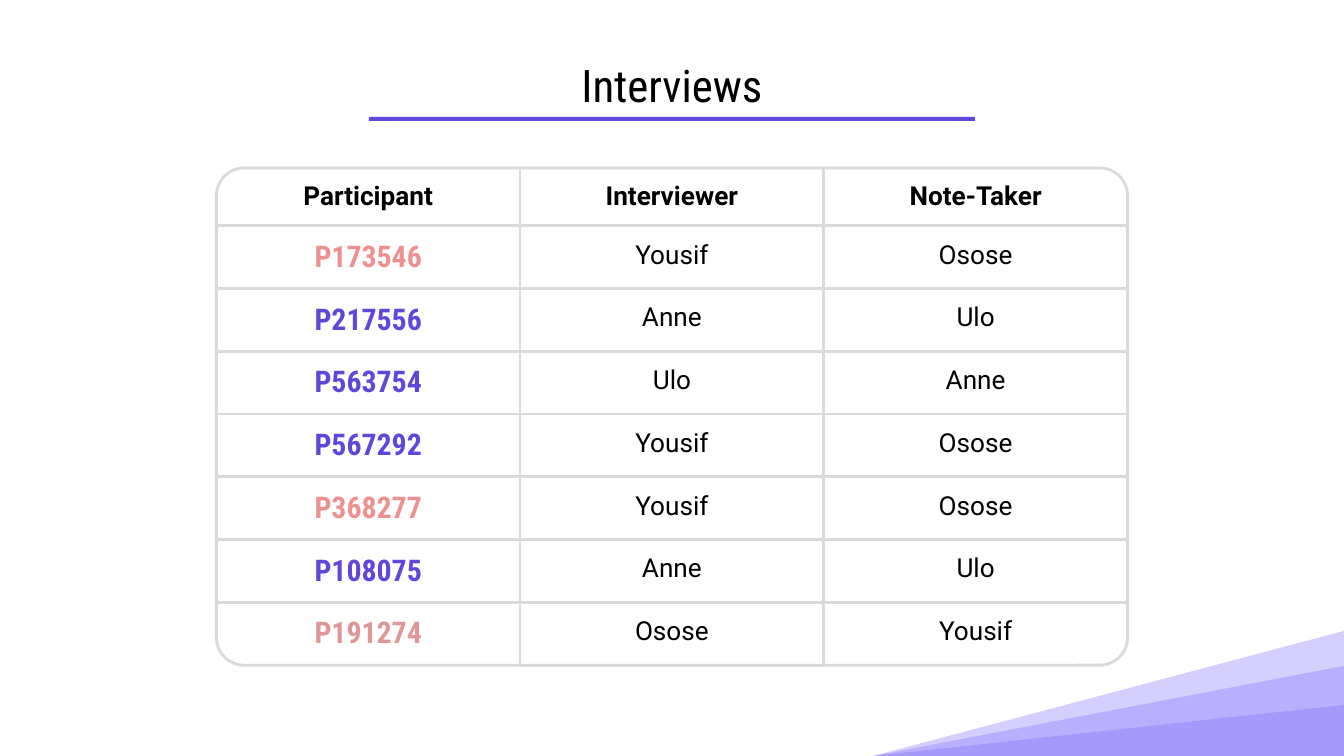
from lxml.etree import SubElement
from pptx import Presentation
from pptx.dml.color import RGBColor
from pptx.enum.shapes import MSO_SHAPE
from pptx.enum.text import MSO_ANCHOR, PP_ALIGN
from pptx.oxml.ns import qn
from pptx.util import Inches, Pt

COLORS = {"black": "000000", "violet": "6146D9", "lilac": "7E6CFB",
          "pink": "ED9090", "rose": "E09696", "grid": "DADADA"}
HEADINGS = ["Participant", "Interviewer", "Note-Taker"]
INTERVIEWS = [
    ("P173546", "Yousif", "Osose", "pink"),
    ("P217556", "Anne", "Ulo", "violet"),
    ("P563754", "Ulo", "Anne", "violet"),
    ("P567292", "Yousif", "Osose", "violet"),
    ("P368277", "Yousif", "Osose", "pink"),
    ("P108075", "Anne", "Ulo", "violet"),
    ("P191274", "Osose", "Yousif", "rose"),
]

# Slide and grid measures in inches
WIDTH = 10
HEIGHT = WIDTH * 9 / 16
COLUMN, HEADER = 2.26, 0.43
TABLE_WIDTH, TABLE_HEIGHT = len(HEADINGS) * COLUMN, 3.7
ROW = (TABLE_HEIGHT - HEADER) / len(INTERVIEWS)
LEFT, TOP = (WIDTH - TABLE_WIDTH) / 2, 1.25
NO_STYLE = "{2D5ABB26-0587-4C30-8999-92F81FD0307C}"

presentation = Presentation()
presentation.slide_width, presentation.slide_height = Inches(WIDTH), Inches(HEIGHT)
slide = presentation.slides.add_slide(presentation.slide_layouts[6])


def add_shape(kind, left, top, width, height, fill=None, line=None):
    shape = slide.shapes.add_shape(kind, *map(Inches, (left, top, width, height)))
    shape.shadow.inherit = False
    if fill:
        shape.fill.solid()
        shape.fill.fore_color.rgb = RGBColor.from_string(COLORS[fill])
    else:
        shape.fill.background()
    if line:
        shape.line.color.rgb = RGBColor.from_string(COLORS[line])
        shape.line.width = Pt(1.5)
    else:
        shape.line.fill.background()
    return shape


def write(frame, text, size, font="Roboto", color="black", bold=False):
    frame.word_wrap = True
    paragraph = frame.paragraphs[0]
    paragraph.text = text
    paragraph.alignment = PP_ALIGN.CENTER
    paragraph.font.name, paragraph.font.size, paragraph.font.bold = font, Pt(size), bold
    paragraph.font.color.rgb = RGBColor.from_string(COLORS[color])


# Translucent corner rays
for height in (0.93, 0.67, 0.38):
    ray = add_shape(MSO_SHAPE.RIGHT_TRIANGLE, 0.65 * WIDTH, HEIGHT - height,
                    0.35 * WIDTH, height, fill="lilac")
    ray._element.spPr.xfrm.set("flipH", "1")
    color = ray._element.spPr.find(qn("a:solidFill"))[0]
    SubElement(color, qn("a:alpha"), val="32000")

# Title and underline
title = slide.shapes.add_textbox(Inches(0.5), Inches(0.45), Inches(WIDTH - 1), Inches(0.36))
title.text_frame.vertical_anchor = MSO_ANCHOR.MIDDLE
title.text_frame.margin_top = title.text_frame.margin_bottom = Inches(0.1)
write(title.text_frame, "Interviews", 24, "Roboto Condensed")
add_shape(MSO_SHAPE.RECTANGLE, (WIDTH - 4.51) / 2, 0.87, 4.51, 0.03, fill="violet")

# Grid: middle column, alternate rows and rounded frame
add_shape(MSO_SHAPE.RECTANGLE, LEFT + COLUMN, TOP, COLUMN, TABLE_HEIGHT, line="grid")
for row in (0, 2, 4, 5):
    add_shape(MSO_SHAPE.RECTANGLE, LEFT, TOP + HEADER + row * ROW, TABLE_WIDTH, ROW, line="grid")
frame = add_shape(MSO_SHAPE.ROUNDED_RECTANGLE, LEFT, TOP, TABLE_WIDTH, TABLE_HEIGHT, line="grid")
frame.adjustments[0] = 0.056

# Interview table
table = slide.shapes.add_table(len(INTERVIEWS) + 1, len(HEADINGS), Inches(LEFT), Inches(TOP),
                               Inches(TABLE_WIDTH), Inches(TABLE_HEIGHT)).table
table.first_row = table.horz_banding = False
table._tbl.tblPr.find(qn("a:tableStyleId")).text = NO_STYLE
for column in table.columns:
    column.width = Inches(COLUMN)
for index, row in enumerate(table.rows):
    row.height = Inches(ROW if index else HEADER)
    for cell in row.cells:
        cell.fill.background()
        cell.margin_left = cell.margin_right = Inches(0.1)
        cell.margin_top = cell.margin_bottom = Inches(0.1)

for column, heading in enumerate(HEADINGS):
    write(table.cell(0, column).text_frame, heading, 14, bold=True)
for row, (participant, interviewer, note_taker, color) in enumerate(INTERVIEWS, 1):
    write(table.cell(row, 0).text_frame, participant, 16, "Roboto Condensed", color, bold=True)
    write(table.cell(row, 1).text_frame, interviewer, 14)
    write(table.cell(row, 2).text_frame, note_taker, 14)

presentation.save("out.pptx")
